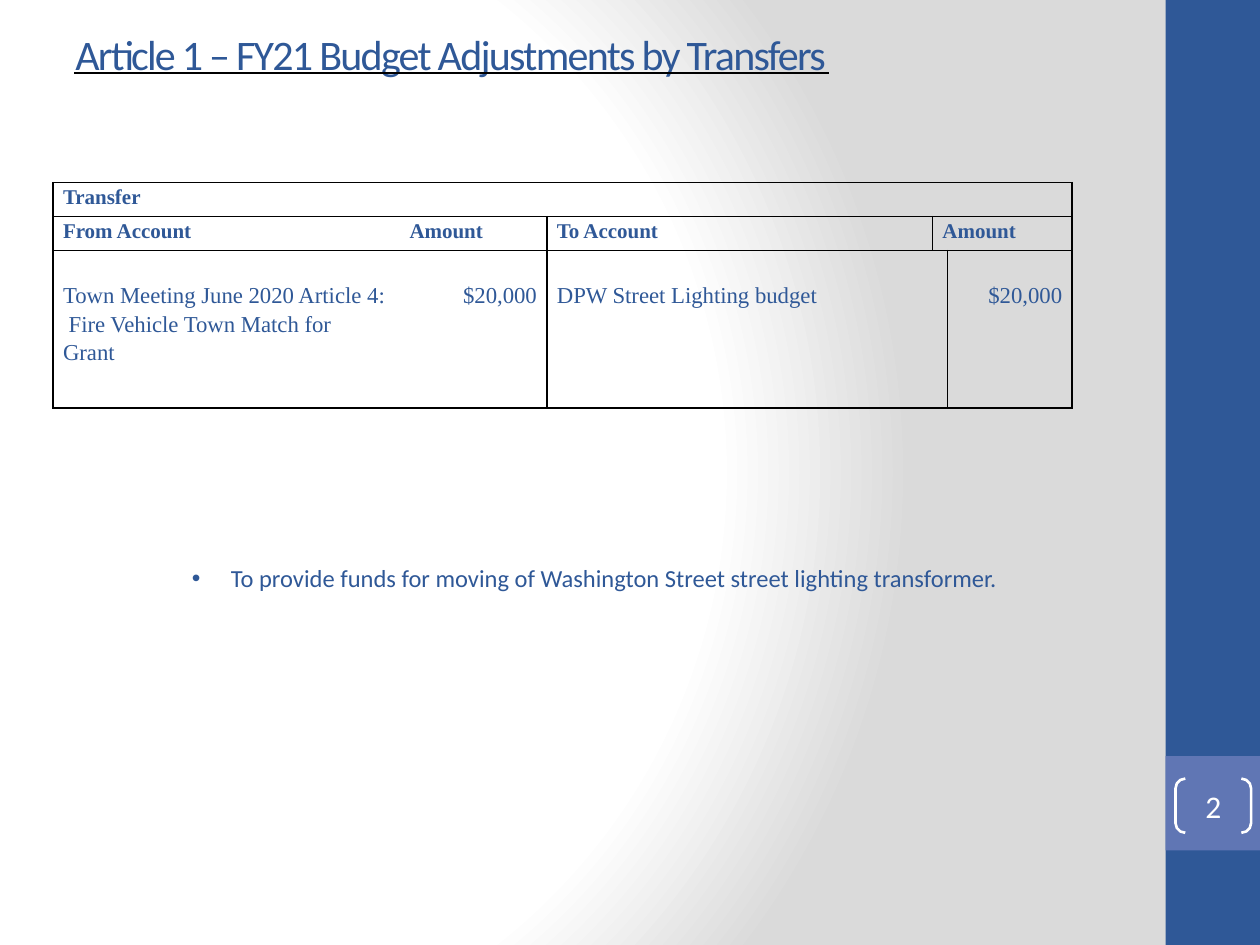
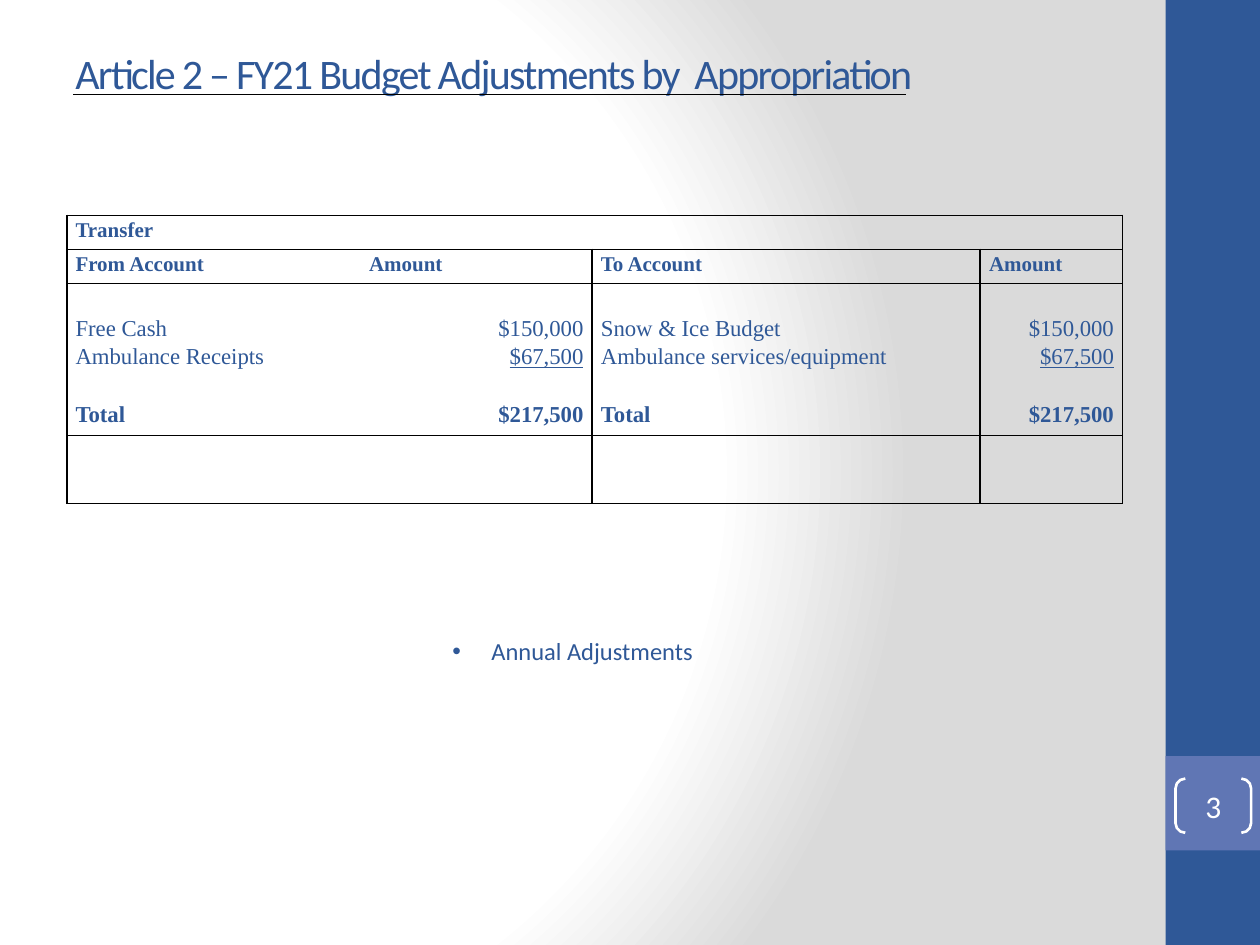
import dataclasses

import lxml.etree
import pptx
import pptx.dml.color
import pptx.enum.shapes
import pptx.enum.text
import pptx.oxml
import pptx.oxml.ns
import pptx.util

Inches = pptx.util.Inches
Pt = pptx.util.Pt
qn = pptx.oxml.ns.qn
Align = pptx.enum.text.PP_ALIGN
Shapes = pptx.enum.shapes.MSO_SHAPE
DRAWING_NS = "http://schemas.openxmlformats.org/drawingml/2006/main"
NO_TABLE_STYLE = "{2D5ABB26-0587-4C30-8999-92F81FD0307C}"


@dataclasses.dataclass(frozen=True)
class Theme:
    blue: str = "2F5897"
    light_blue: str = "6076B4"
    white: str = "FFFFFF"
    grey: str = "DADADA"
    black: str = "000000"
    sans: str = "Calibri"
    serif: str = "Times New Roman"
    title_size: int = 24
    number_size: int = 18
    note_size: int = 14
    entry_size: int = 13
    heading_size: int = 12
    rule_width: float = 1
    bracket_width: float = 1.5
    entry_line: float = 16.5


THEME = Theme()


@dataclasses.dataclass(frozen=True)
class Entry:
    """One line of a table cell; gap leaves one line of space above it."""
    text: str
    bold: bool = False
    underline: bool = False
    gap: bool = False


def rgb(value):
    return pptx.dml.color.RGBColor.from_string(value)


def format_runs(paragraph, font, size, color, bold=False, underline=False):
    for run in paragraph.runs:
        run.font.name = font
        run.font.size = Pt(size)
        run.font.color.rgb = rgb(color)
        run.font.bold = bold
        run.font.underline = underline


def paint_background(slide):
    """Give the slide a round gradient from white to grey at the right."""
    slide.background.fill.solid()
    properties = slide.element.find(".//" + qn("p:bgPr"))
    stops = ((0, THEME.white), (75, THEME.white), (100, THEME.grey))
    stop_xml = "".join(
        f'<a:gs pos="{position * 1000}"><a:srgbClr val="{color}"/></a:gs>'
        for position, color in stops)
    gradient = pptx.oxml.parse_xml(
        f'<a:gradFill xmlns:a="{DRAWING_NS}" rotWithShape="1"><a:gsLst>{stop_xml}</a:gsLst>'
        '<a:path path="circle"><a:fillToRect l="20000" t="50000" r="100000" b="50000"/>'
        '</a:path></a:gradFill>')
    properties.replace(properties[0], gradient)


def add_band(slide, top, height, color):
    band = slide.shapes.add_shape(
        Shapes.RECTANGLE, Inches(9.25), Inches(top), Inches(0.75), Inches(height))
    band.shadow.inherit = False
    band.fill.solid()
    band.fill.fore_color.rgb = rgb(color)
    band.line.fill.background()


def add_page_number(slide, number):
    bracket = slide.shapes.add_shape(
        Shapes.DOUBLE_BRACKET, Inches(9.33), Inches(6.18), Inches(0.6), Inches(0.43))
    bracket.adjustments[0] = 0.18
    bracket.shadow.inherit = False
    bracket.fill.background()
    bracket.line.color.rgb = rgb(THEME.white)
    bracket.line.width = Pt(THEME.bracket_width)
    frame = bracket.text_frame
    frame.margin_left = frame.margin_right = frame.margin_top = frame.margin_bottom = 0
    frame.vertical_anchor = pptx.enum.text.MSO_ANCHOR.MIDDLE
    frame.text = str(number)
    frame.paragraphs[0].alignment = Align.CENTER
    format_runs(frame.paragraphs[0], THEME.sans, THEME.number_size, THEME.white)


def add_text(slide, text, left, top, width, height, size):
    box = slide.shapes.add_textbox(Inches(left), Inches(top), Inches(width), Inches(height))
    box.text_frame.word_wrap = True
    box.text_frame.text = text
    format_runs(box.text_frame.paragraphs[0], THEME.sans, size, THEME.blue)
    return box.text_frame


def add_title(slide, text, top):
    frame = add_text(slide, text, 0.5, top, 8.33, 0.7, THEME.title_size)
    frame.vertical_anchor = pptx.enum.text.MSO_ANCHOR.MIDDLE
    for run in frame.paragraphs[0].runs:
        run.font._element.set("spc", "-100")


def add_title_rule(slide, left, right, height):
    rule = slide.shapes.add_connector(
        pptx.enum.shapes.MSO_CONNECTOR.STRAIGHT,
        Inches(left), Inches(height), Inches(right), Inches(height))
    rule.line.color.rgb = rgb(THEME.black)
    rule.line.width = Pt(THEME.rule_width)
    lxml.etree.SubElement(rule.element.spPr, qn("a:effectLst"))


def add_note(slide, text, left, top, width):
    frame = add_text(slide, text, left, top, width, 0.34, THEME.note_size)
    paragraph = frame.paragraphs[0]
    paragraph.alignment = Align.CENTER
    properties = paragraph._p.get_or_add_pPr()
    properties.set("marL", str(Inches(0.31)))
    properties.set("indent", str(-Inches(0.31)))
    lxml.etree.SubElement(properties, qn("a:buFont")).set("typeface", "Arial")
    lxml.etree.SubElement(properties, qn("a:buChar")).set("char", "•")


def draw_borders(cell, sides):
    """Rule the named sides (L, R, T, B) of a cell that has no fill."""
    cell.fill.background()
    properties = cell._tc.get_or_add_tcPr()
    for index, side in enumerate(side for side in "LRTB" if side in sides):
        properties.insert(index, pptx.oxml.parse_xml(
            f'<a:ln{side} xmlns:a="{DRAWING_NS}" w="{Pt(THEME.rule_width)}">'
            f'<a:solidFill><a:srgbClr val="{THEME.black}"/></a:solidFill></a:ln{side}>'))


def fill_cell(cell, entries, size, alignment, inset, top_inset):
    cell.margin_left = cell.margin_right = Inches(inset)
    cell.margin_top = Pt(top_inset)
    cell.margin_bottom = 0
    frame = cell.text_frame
    frame.text = "\n".join(entry.text for entry in entries)
    for paragraph, entry in zip(frame.paragraphs, entries):
        paragraph.alignment = alignment
        paragraph.line_spacing = 1.15
        if entry.gap:
            paragraph.space_before = Pt(THEME.entry_line)
        format_runs(paragraph, THEME.serif, size, THEME.blue, entry.bold, entry.underline)


def add_transfer_table(slide, left, top, columns, heights, inset, heading_spans,
                       entry_spans, entries):
    """Draw title, heading and entry rows; a fourth height adds an empty closing row."""
    shape = slide.shapes.add_table(
        len(heights), len(columns), Inches(left), Inches(top),
        Inches(sum(columns)), Inches(sum(heights)))
    table = shape.table
    table.first_row = table.horz_banding = False
    table._tbl.tblPr.find(qn("a:tableStyleId")).text = NO_TABLE_STYLE
    for column, width in zip(table.columns, columns):
        column.width = Inches(width)
    for row, height in zip(table.rows, heights):
        row.height = Inches(height)

    headings = [[Entry(text, bold=True)]
                for text in ("From Account", "Amount", "To Account", "Amount")]
    rows = [
        ([len(columns)], [[Entry("Transfer", bold=True)]]),
        (heading_spans, headings),
        (entry_spans, entries),
        (entry_spans, [[]] * 4),
    ]
    for row_index, (spans, contents) in enumerate(rows[:len(heights)]):
        is_entry = row_index == 2
        row_sides = "T" if row_index < 3 else ""
        if row_index < 2 or row_index == len(heights) - 1:
            row_sides += "B"
        start = 0
        for position, (span, content) in enumerate(zip(spans, contents)):
            is_amount = position % 2 == 1
            edge = "LR" if row_index == 0 else "R" if is_amount else "L"
            end = start + span - 1
            for column_index in range(start, end + 1):
                draw_borders(table.cell(row_index, column_index), row_sides + edge)
            cell = table.cell(row_index, start)
            if span > 1:
                cell.merge(table.cell(row_index, end))
            if content:
                fill_cell(cell, content,
                          THEME.entry_size if is_entry else THEME.heading_size,
                          Align.RIGHT if is_entry and is_amount else Align.LEFT,
                          inset, THEME.entry_line if is_entry else 0)
            start = end + 1


def add_article_slide(presentation, number):
    slide = presentation.slides.add_slide(presentation.slide_layouts[6])
    paint_background(slide)
    add_band(slide, 0, 7.5, THEME.blue)
    add_band(slide, 6, 0.75, THEME.light_blue)
    add_page_number(slide, number)
    return slide


def build_transfers_slide(presentation):
    slide = add_article_slide(presentation, 2)
    add_title(slide, "Article 1 – FY21 Budget Adjustments by Transfers", 0.08)
    add_title_rule(slide, 0.59, 6.58, 0.58)
    add_note(slide, "To provide funds for moving of Washington Street street lighting "
             "transformer.", 0.56, 4.42, 8.32)
    amount = [Entry("$20,000")]
    source = [Entry("Town Meeting June 2020 Article 4:"),
              Entry(" Fire Vehicle Town Match for"), Entry("Grant")]
    add_transfer_table(
        slide, 0.42, 1.45, [2.75, 1.17, 3.06, 0.12, 0.99], [0.27, 0.27, 1.25], 0.08,
        [1, 1, 1, 2], [1, 1, 2, 1],
        [source, amount, [Entry("DPW Street Lighting budget")], amount])


def build_appropriation_slide(presentation):
    slide = add_article_slide(presentation, 3)
    add_title(slide, "Article 2 – FY21 Budget Adjustments by  Appropriation", 0.23)
    add_title_rule(slide, 0.58, 7.19, 0.75)
    add_note(slide, "Annual Adjustments", 0.52, 5, 8.05)
    total = Entry("Total", bold=True, gap=True)
    amounts = [Entry("$150,000"), Entry("$67,500", underline=True),
               Entry("$217,500", bold=True, gap=True)]
    sources = [Entry("Free Cash"), Entry("Ambulance Receipts"), total]
    targets = [Entry("Snow & Ice Budget"), Entry("Ambulance services/equipment"), total]
    add_transfer_table(
        slide, 0.53, 1.71, [2.33, 1.84, 3.08, 1.13], [0.27, 0.27, 1.2, 0.54], 0.07,
        [1, 1, 1, 1], [1, 1, 1, 1], [sources, amounts, targets, amounts])


def main():
    presentation = pptx.Presentation()
    presentation.slide_width = Inches(10)
    presentation.slide_height = Inches(7.5)
    build_transfers_slide(presentation)
    build_appropriation_slide(presentation)
    presentation.save("out.pptx")


if __name__ == "__main__":
    main()
